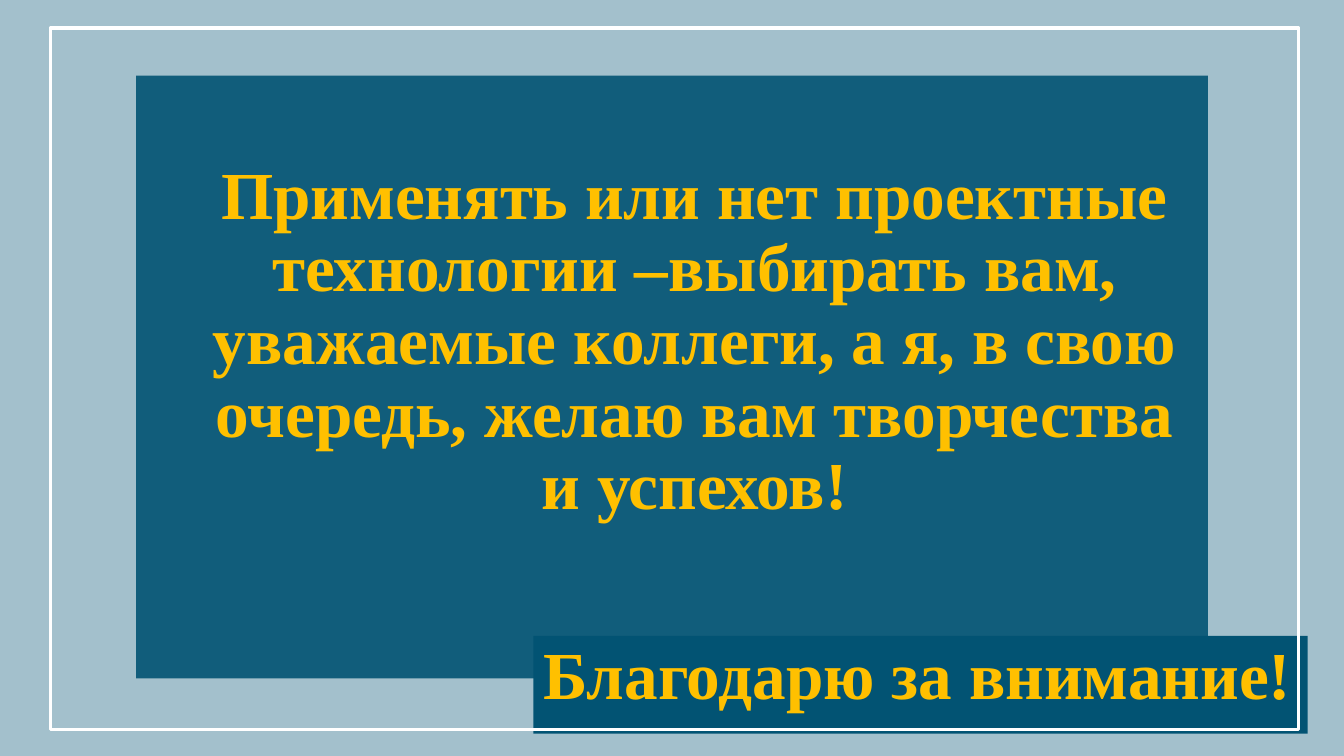
from lxml import etree
from pptx import Presentation
from pptx.dml.color import RGBColor
from pptx.enum.shapes import MSO_SHAPE
from pptx.enum.text import MSO_ANCHOR, PP_ALIGN
from pptx.oxml.ns import qn
from pptx.util import Inches, Pt

RECT = MSO_SHAPE.RECTANGLE
TOP, BOTTOM = MSO_ANCHOR.TOP, MSO_ANCHOR.BOTTOM
LEFT, CENTER = PP_ALIGN.LEFT, PP_ALIGN.CENTER
BLUE, GOLD, WHITE = "025373", "FFC000", "FFFFFF"
SLIDE_W, SLIDE_H = 13.33, 7.5


def rgb(value):
    return RGBColor.from_string(value)


def add_rect(s, box, fill=None, opacity=100, line=None):
    """Add a rectangle; opacity is a percentage."""
    sp = s.shapes.add_shape(RECT, *map(Inches, box))
    sp.shadow.inherit = False
    if fill:
        sp.fill.solid()
        sp.fill.fore_color.rgb = rgb(fill)
        if opacity < 100:
            color = sp.fill._xPr.find(".//" + qn("a:srgbClr"))
            etree.SubElement(color, qn("a:alpha"), val=str(opacity * 1000))
    else:
        sp.fill.background()
    if line:
        sp.line.color.rgb = rgb(line)
        sp.line.width = Pt(2.5)
    else:
        sp.line.fill.background()
    return sp


def set_text(sp, text, align, anchor):
    tf = sp.text_frame
    tf.word_wrap = True
    tf.vertical_anchor = anchor
    p = tf.paragraphs[0]
    p.alignment = align
    p.line_spacing = 0.9
    r = p.add_run()
    r.text = text
    r.font.name = "Times New Roman"
    r.font.size = Pt(48)
    r.font.bold = True
    r.font.color.rgb = rgb(GOLD)


def add_message(s, box):
    """Dark panel with the closing message inside it."""
    x, y, w, h = box
    add_rect(s, box, BLUE, 90)
    sp = s.shapes.add_textbox(*map(Inches, (x + 0.47, y + 0.61, w - 0.49, h - 2.09)))
    set_text(sp, "Применять или нет проектные технологии –выбирать вам, "
             "уважаемые коллеги, а я, в свою очередь, желаю вам творчества "
             "и успехов!", CENTER, BOTTOM)


def add_thanks(s, box):
    set_text(add_rect(s, box, BLUE), "Благодарю за внимание!", LEFT, TOP)


def build_closing_slide(prs):
    s = prs.slides.add_slide(prs.slide_layouts[6])
    s.background.fill.solid()
    s.background.fill.fore_color.rgb = rgb(WHITE)
    add_rect(s, (0, 0, SLIDE_W, SLIDE_H), BLUE, 36)
    add_message(s, (1.35, 0.75, 10.63, 5.98))
    add_thanks(s, (5.29, 6.31, 7.68, 0.97))
    add_rect(s, (0.5, 0.28, 12.38, 6.96), line=WHITE)


def main():
    prs = Presentation()
    prs.slide_width, prs.slide_height = Inches(SLIDE_W), Inches(SLIDE_H)
    build_closing_slide(prs)
    prs.save("out.pptx")


if __name__ == "__main__":
    main()
